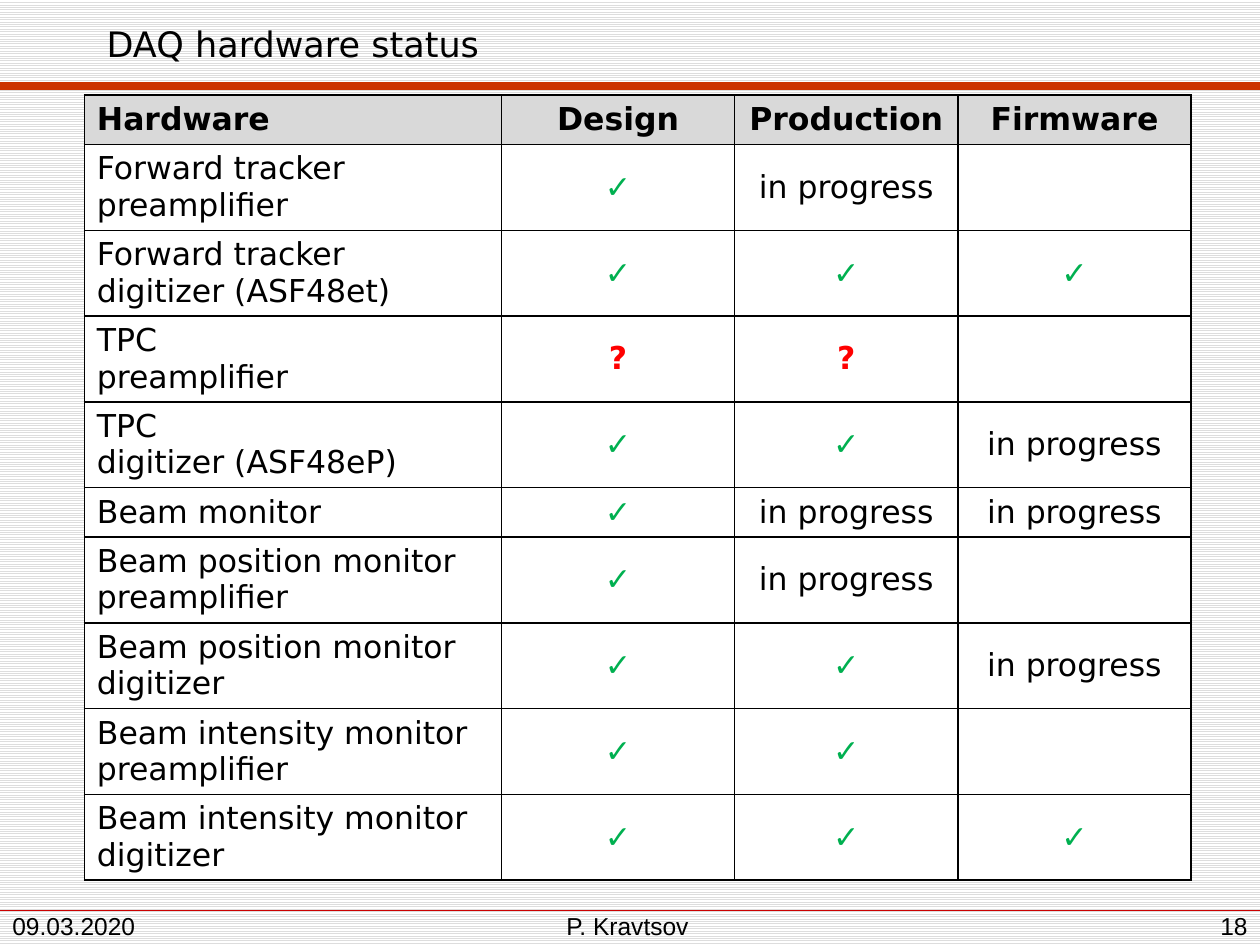
"""Build the DAQ hardware status slide."""
from dataclasses import dataclass

from lxml.etree import SubElement
from pptx import Presentation
from pptx.dml.color import RGBColor
from pptx.enum.dml import MSO_PATTERN
from pptx.enum.shapes import MSO_CONNECTOR
from pptx.enum.text import MSO_ANCHOR, PP_ALIGN
from pptx.oxml.ns import qn
from pptx.util import Cm, Pt

COLORS = {
    "text": "000000", "done": "00B050", "open": "FF0000", "header": "D9D9D9",
    "cell": "FFFFFF", "stripe": "DDDDDD", "title_rule": "CC3300", "footer_rule": "CC0000",
}
DONE, OPEN, BUSY, NONE = "✓", "?", "in progress", ""
STATUS_COLORS = {DONE: "done", OPEN: "open"}
COLUMN_WIDTHS = (8.41, 4.7, 4.5, 4.7)
SINGLE_ROW, DOUBLE_ROW = 0.99, 1.73


@dataclass(frozen=True)
class Hardware:
    name: str
    design: str
    production: str
    firmware: str


@dataclass(frozen=True)
class Label:
    text: str
    left: float
    top: float
    width: float
    height: float
    font: str = "Arial"
    size: int = 14
    align: PP_ALIGN = PP_ALIGN.LEFT
    anchor: MSO_ANCHOR = MSO_ANCHOR.BOTTOM


@dataclass(frozen=True)
class Rule:
    top: float
    color: str
    weight: float


HEADINGS = Hardware("Hardware", "Design", "Production", "Firmware")
ITEMS = (
    Hardware("Forward tracker\npreamplifier", DONE, BUSY, NONE),
    Hardware("Forward tracker\ndigitizer (ASF48et)", DONE, DONE, DONE),
    Hardware("TPC\npreamplifier", OPEN, OPEN, NONE),
    Hardware("TPC\ndigitizer (ASF48eP)", DONE, DONE, BUSY),
    Hardware("Beam monitor", DONE, BUSY, BUSY),
    Hardware("Beam position monitor\npreamplifier", DONE, BUSY, NONE),
    Hardware("Beam position monitor\ndigitizer", DONE, DONE, BUSY),
    Hardware("Beam intensity monitor\vpreamplifier", DONE, DONE, NONE),
    Hardware("Beam intensity monitor\vdigitizer", DONE, DONE, DONE),
)
RULES = (Rule(18.34, "footer_rule", 0.25), Rule(1.73, "title_rule", 4.5))
LABELS = (
    Label("DAQ hardware status", 1.9, 0.1, 22.83, 1.52, "DejaVu Sans", 20,
          anchor=MSO_ANCHOR.MIDDLE),
    Label("P. Kravtsov", 7.9, 18.41, 9.5, 0.64, align=PP_ALIGN.CENTER),
    Label("09.03.2020", 0, 18.34, 4.6, 0.71),
    Label("18", 19.48, 18.24, 5.92, 0.81, align=PP_ALIGN.RIGHT),
)


def rgb(name: str) -> RGBColor:
    """Return a palette colour."""
    return RGBColor.from_string(COLORS[name])


def format_text(frame, font: str, size: int, align: PP_ALIGN,
                color: str = "text", bold: bool = False) -> None:
    """Format every run of a text frame."""
    for paragraph in frame.paragraphs:
        paragraph.alignment = align
        for run in paragraph.runs:
            run.font.name = font
            run.font.size = Pt(size)
            run.font.bold = bold
            run.font.color.rgb = rgb(color)


def draw_rule(slide, rule: Rule) -> None:
    """Draw a horizontal line across the slide."""
    line = slide.shapes.add_connector(
        MSO_CONNECTOR.STRAIGHT, Cm(0), Cm(rule.top), Cm(25.4), Cm(rule.top))
    line.line.color.rgb = rgb(rule.color)
    line.line.width = Pt(rule.weight)
    SubElement(line._element.spPr, qn("a:effectLst"))


def draw_label(slide, label: Label) -> None:
    """Place a single line of text."""
    box = slide.shapes.add_textbox(
        Cm(label.left), Cm(label.top), Cm(label.width), Cm(label.height))
    frame = box.text_frame
    frame.text = label.text
    frame.word_wrap = True
    frame.vertical_anchor = label.anchor
    frame.margin_bottom = Cm(0.1)
    format_text(frame, label.font, label.size, label.align)


def draw_borders(cell) -> None:
    """Give a cell thin black borders on all sides."""
    properties = cell._tc.get_or_add_tcPr()
    for side in ("lnL", "lnR", "lnT", "lnB"):
        border = SubElement(properties, qn(f"a:{side}"), w=str(Pt(1)))
        fill = SubElement(border, qn("a:solidFill"))
        SubElement(fill, qn("a:srgbClr"), val=COLORS["text"])


def fill_cell(cell, text: str, is_header: bool, is_name: bool) -> None:
    """Write and style one table cell."""
    draw_borders(cell)
    cell.fill.solid()
    cell.fill.fore_color.rgb = rgb("header" if is_header else "cell")
    cell.text_frame.text = text
    if not (is_header or is_name):
        cell.vertical_anchor = MSO_ANCHOR.MIDDLE
    format_text(cell.text_frame, "DejaVu Sans", 18,
                PP_ALIGN.LEFT if is_name else PP_ALIGN.CENTER,
                STATUS_COLORS.get(text, "text"), is_header or text in STATUS_COLORS)


def draw_status_table(slide) -> None:
    """Draw the table of hardware states."""
    entries = (HEADINGS, *ITEMS)
    heights = [DOUBLE_ROW if len(entry.name.splitlines()) > 1 else SINGLE_ROW
               for entry in entries]
    table = slide.shapes.add_table(
        len(entries), len(COLUMN_WIDTHS), Cm(1.7), Cm(1.92),
        Cm(sum(COLUMN_WIDTHS)), Cm(sum(heights))).table
    table.horz_banding = False
    for column, width in zip(table.columns, COLUMN_WIDTHS):
        column.width = Cm(width)
    for row, height, entry in zip(table.rows, heights, entries):
        row.height = Cm(height)
        texts = (entry.name, entry.design, entry.production, entry.firmware)
        for index, (cell, text) in enumerate(zip(row.cells, texts)):
            fill_cell(cell, text, entry is HEADINGS, index == 0)


def main() -> None:
    """Assemble and save the slide."""
    deck = Presentation()
    deck.slide_width, deck.slide_height = Cm(25.4), Cm(19.05)
    slide = deck.slides.add_slide(deck.slide_layouts[6])
    backdrop = slide.background.fill
    backdrop.patterned()
    backdrop.pattern = MSO_PATTERN.LIGHT_HORIZONTAL
    backdrop.fore_color.rgb = rgb("stripe")
    backdrop.back_color.rgb = rgb("cell")
    for rule in RULES:
        draw_rule(slide, rule)
    draw_status_table(slide)
    for label in LABELS:
        draw_label(slide, label)
    deck.save("out.pptx")


if __name__ == "__main__":
    main()
